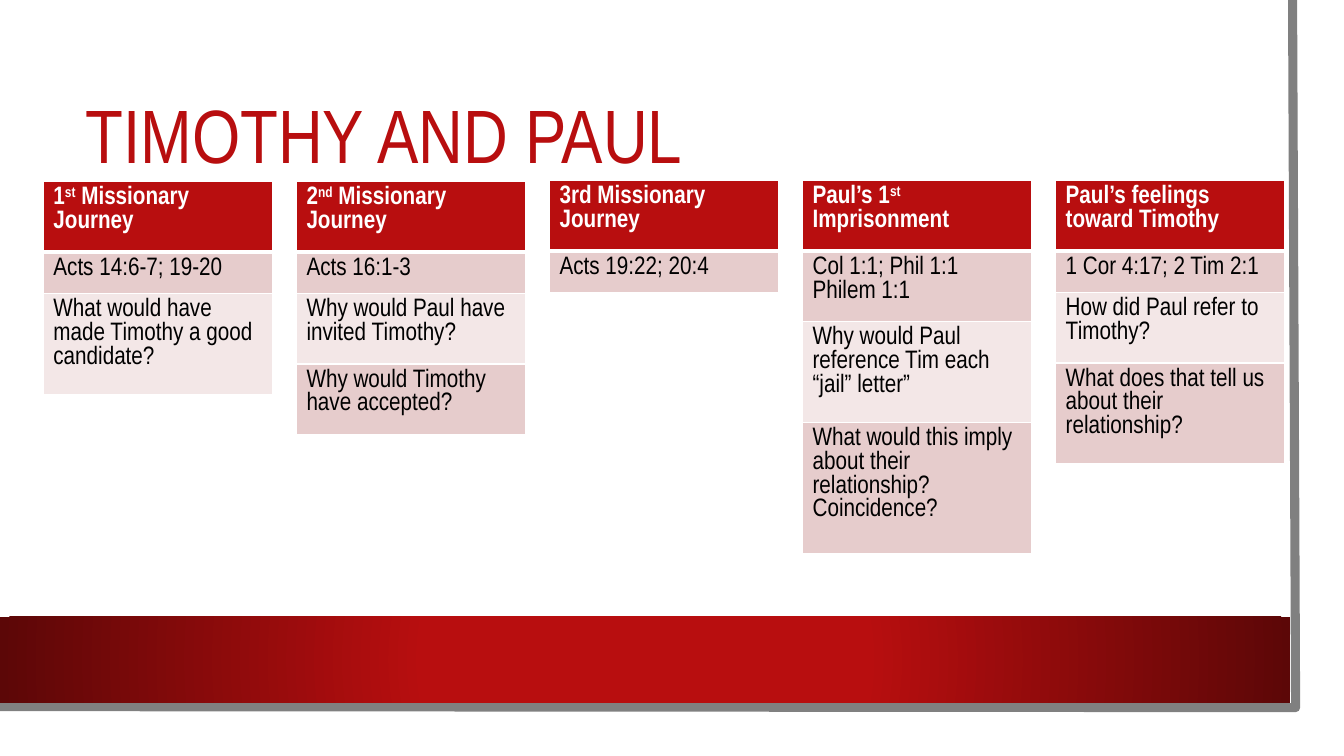
from lxml import etree
from pptx import Presentation
from pptx.dml.color import RGBColor
from pptx.enum.shapes import MSO_SHAPE
from pptx.enum.text import MSO_ANCHOR
from pptx.oxml import parse_xml
from pptx.oxml.ns import nsdecls, qn
from pptx.util import Inches, Pt

HEX = {"red": "B80E0F", "dark": "5C0707", "white": "FFFFFF", "black": "000000",
       "gray": "808080", "rose": "E6CCCC", "pale": "F3E7E7"}
RGB = {name: RGBColor.from_string(code) for name, code in HEX.items()}
FONT = "Arial Narrow"
LEFT, STEP, WIDE = 0.43, 2.51, 2.27  # grid of the five columns
HEAD, ROW = 0.65, 0.41

# top, header height, header runs (every second one is raised), body rows
COLUMNS = [
    (1.8, ROW, ["1", "st", " Missionary Journey"],
     ["Acts 14:6-7; 19-20", "What would have made Timothy a good candidate?"]),
    (1.8, HEAD, ["2", "nd", " Missionary Journey"],
     ["Acts 16:1-3", "Why would Paul have invited Timothy?",
      "Why would Timothy have accepted?"]),
    (1.79, HEAD, ["3rd Missionary Journey"], ["Acts 19:22; 20:4"]),
    (1.79, HEAD, ["Paul’s 1", "st", " Imprisonment"],
     ["Col 1:1; Phil 1:1 Philem 1:1",
      "Why would Paul reference Tim each “jail” letter”",
      "What would this imply about their relationship? Coincidence?"]),
    (1.79, HEAD, ["Paul’s feelings toward Timothy"],
     ["1 Cor 4:17; 2 Tim 2:1", "How did Paul refer to Timothy?",
      "What does that tell us about their relationship?"]),
]


def add_run(para, text, size, color, bold=False):
    run = para.add_run()
    run.text = text
    run.font.name, run.font.size, run.font.bold = FONT, Pt(size), bold
    run.font.color.rgb = RGB[color]
    return run


def set_edges(cell, top, bottom):
    """Draw white borders, 1 pt at the sides and as given above and below."""
    props = cell._tc.get_or_add_tcPr()
    for spot, (side, width) in enumerate(zip("LRTB", (1, 1, top, bottom))):
        props.insert(spot, parse_xml(
            f'<a:ln{side} {nsdecls("a")} w="{Pt(width)}"><a:solidFill>'
            f'<a:srgbClr val="{HEX["white"]}"/></a:solidFill></a:ln{side}>'))


deck = Presentation()
deck.slide_width, deck.slide_height = Inches(13.33), Inches(7.5)
slide = deck.slides.add_slide(deck.slide_layouts[6])
shapes = slide.shapes

# Paper, gray edge and red band
paper = shapes.add_shape(MSO_SHAPE.RECTANGLE, 0, 0, Inches(13.1), Inches(7.27))
paper.fill.solid()
paper.fill.fore_color.rgb = RGB["white"]

pen = shapes.build_freeform(Inches(12.82), 0)
pen.add_line_segments([(Inches(12.85), Inches(7.02)),
                       (Inches(-0.03), Inches(7.01))], close=False)
edge = pen.convert_to_shape()
edge.fill.background()

band = shapes.add_shape(MSO_SHAPE.RECTANGLE, 0, Inches(6.12), Inches(12.8), Inches(0.85))
band.fill.gradient()
for stop, place, color in zip(band.fill.gradient_stops, (0.34, 1), ("red", "dark")):
    stop.position = place
    stop.color.rgb = RGB[color]
linear = band._element.spPr.find(".//" + qn("a:lin"))
radial = etree.Element(qn("a:path"), path="circle")
etree.SubElement(radial, qn("a:fillToRect"), l="50000", t="50000", r="50000", b="50000")
linear.getparent().replace(linear, radial)

for shape in (paper, edge, band):
    shape.shadow.inherit = False
    shape.line.fill.background()
edge.line.color.rgb = RGB["gray"]
edge.line.width = Pt(6.5)

# Title
title = shapes.add_textbox(Inches(0.75), Inches(0.75), Inches(11.37), Inches(1.26))
title.text_frame.word_wrap = True
title.text_frame.vertical_anchor = MSO_ANCHOR.MIDDLE
para = title.text_frame.paragraphs[0]
para.line_spacing = 0.9
add_run(para, "TIMOTHY AND PAUL", 54, "red")

# One table for each column
for col, (top, head, heading, body) in enumerate(COLUMNS):
    frame = shapes.add_table(len(body) + 1, 1, Inches(LEFT + col * STEP), Inches(top),
                             Inches(WIDE), Inches(head + ROW * len(body)))
    table = frame.table
    table.horz_banding = False
    for row, texts in enumerate([heading] + [[text] for text in body]):
        table.rows[row].height = Inches(ROW if row else head)
        cell = table.cell(row, 0)
        cell.fill.solid()
        fill = ("rose" if row % 2 else "pale") if row else "red"
        cell.fill.fore_color.rgb = RGB[fill]
        set_edges(cell, 3 if row == 1 else 1, 1 if row else 3)
        para = cell.text_frame.paragraphs[0]
        for part, text in enumerate(texts):
            run = add_run(para, text, 18, "black" if row else "white", row == 0)
            if part % 2:
                run.font._element.set("baseline", "30000")

deck.save("out.pptx")
